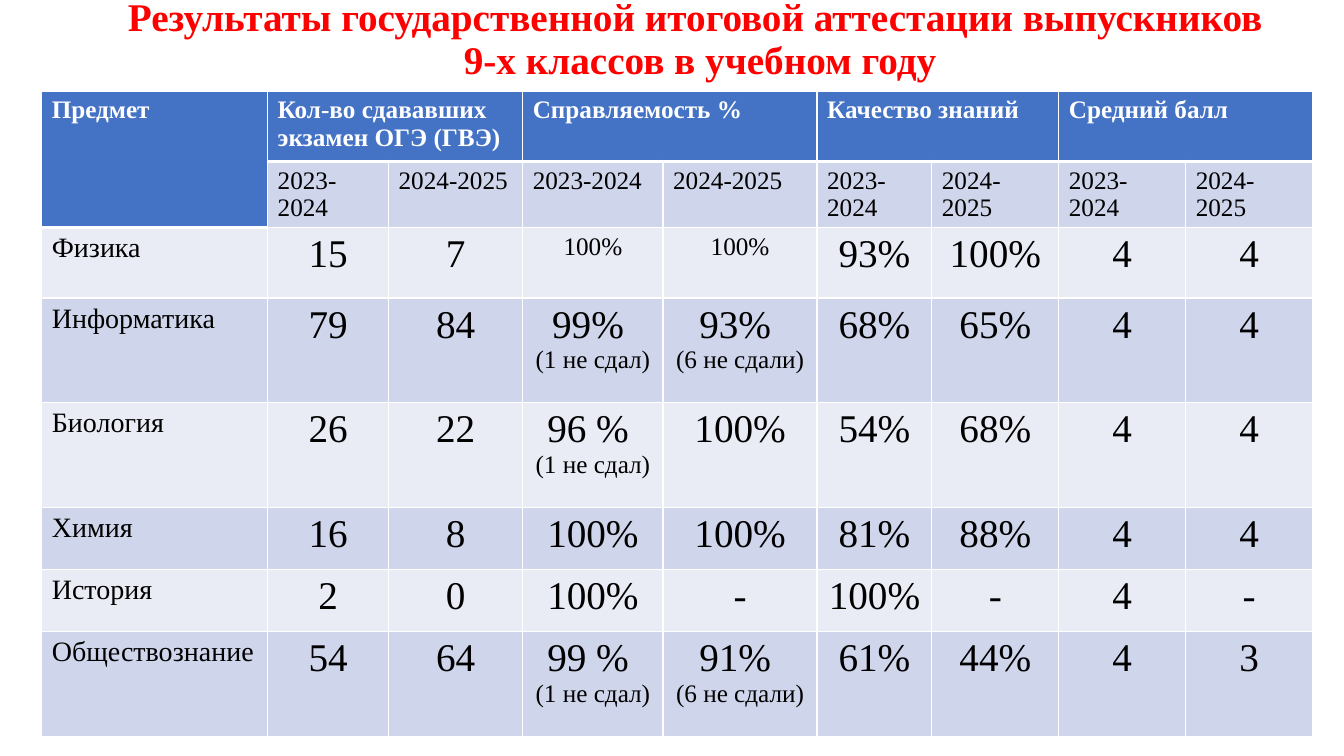
from copy import deepcopy

from lxml.etree import SubElement
from pptx import Presentation
from pptx.dml.color import RGBColor
from pptx.enum.text import MSO_ANCHOR, MSO_AUTO_SIZE, PP_ALIGN
from pptx.oxml.ns import qn
from pptx.util import Pt

RED = RGBColor(0xFF, 0, 0)
BLACK = RGBColor(0, 0, 0)
WHITE = RGBColor(0xFF, 0xFF, 0xFF)
BLUE = RGBColor(0x44, 0x72, 0xC4)
DARK = RGBColor(0xCF, 0xD5, 0xEA)
LIGHT = RGBColor(0xE9, 0xEB, 0xF5)

TITLE = ("Результаты государственной итоговой аттестации выпускников \v"
         "9-х классов в учебном году")
HEADS = ["Кол-во сдававших экзамен ОГЭ (ГВЭ)", "Справляемость %",
         "Качество знаний", "Средний балл"]
YEARS = ["2023-2024", "2024-2025"]
ROWS = [
    ["Физика", "15", "7", "100%", "100%", "93%", "100%", "4", "4"],
    ["Информатика", "79", "84", "99% \n(1 не сдал)", "93% \n(6 не сдали)",
     "68%", "65%", "4", "4"],
    ["Биология", "26", "22", "96 % \n(1 не сдал)", "100%",
     "54%", "68%", "4", "4"],
    ["Химия", "16", "8", "100%", "100%", "81%", "88%", "4", "4"],
    ["История", "2", "0", "100%", "-", "100%", "-", "4", "-"],
    ["Обществознание", "54", "64", "99 % \n(1 не сдал)", "91% \n(6 не сдали)",
     "61%", "44%", "4", "3"],
]
SMALL = {(0, 3), (0, 4)}  # results set in the smaller size
WIDTHS = [161.4, 86.4, 95.8, 100.3, 110, 82, 90.7, 90.7, 90.7]
HEIGHTS = [50.4, 45.4, 50.4, 74.9, 74.9, 43.9, 44.8, 74.9]


def write(frame, text, size=18, note=18, color=BLACK, bold=False,
          align=PP_ALIGN.LEFT, space=None, font="Times New Roman"):
    """Fill a frame; a line in brackets takes the note size."""
    for i, line in enumerate(text.split("\n")):
        para = frame.add_paragraph() if i else frame.paragraphs[0]
        para.text = line
        para.alignment = align
        para.line_spacing = space
        for run in para.runs:
            run.font.name = font
            run.font.size = Pt(note if line.startswith("(") else size)
            run.font.bold = bold
            run.font.color.rgb = color
        # Line breaks take the format of the text around them
        for brk in para._p.findall(qn("a:br")):
            brk.append(deepcopy(para.runs[0].font._rPr))


class Page:
    def __init__(self, deck):
        self.edge = WHITE
        self.slide = deck.slides.add_slide(deck.slide_layouts[5])

    def title(self, text, left, top, width, height):
        shape = self.slide.shapes.title
        shape.left, shape.top = Pt(left), Pt(top)
        shape.width, shape.height = Pt(width), Pt(height)
        frame = shape.text_frame
        frame.word_wrap = True
        frame.auto_size = MSO_AUTO_SIZE.NONE
        frame.vertical_anchor = MSO_ANCHOR.MIDDLE
        write(frame, text, size=28, color=RED, bold=True,
              align=PP_ALIGN.CENTER, space=0.9)

    def table(self, left, top, widths, heights):
        grid = self.slide.shapes.add_table(
            len(heights), len(widths), Pt(left), Pt(top),
            Pt(sum(widths)), Pt(sum(heights))).table
        grid.horz_banding = False
        for col, width in zip(grid.columns, widths):
            col.width = Pt(width)
        for row, height in zip(grid.rows, heights):
            row.height = Pt(height)
        return grid

    def cell(self, cell, text, fill, base=1, **style):
        props = cell._tc.get_or_add_tcPr()
        for side in "LRTB":
            width = base if side == "B" else 1
            line = SubElement(props, qn("a:ln" + side), w=str(Pt(width)))
            paint = SubElement(line, qn("a:solidFill"))
            SubElement(paint, qn("a:srgbClr"), val=str(self.edge))
        cell.fill.solid()
        cell.fill.fore_color.rgb = fill
        write(cell.text_frame, text, **style)


def main():
    deck = Presentation()
    deck.slide_width, deck.slide_height = Pt(960), Pt(540)
    page = Page(deck)
    page.title(TITLE, 67.7, 7.9, 864.7, 41.8)
    grid = page.table(29.8, 65, WIDTHS, HEIGHTS)

    # Heading rows
    head = dict(fill=BLUE, base=3, color=WHITE, bold=True)
    grid.cell(0, 0).merge(grid.cell(1, 0))
    page.cell(grid.cell(0, 0), "Предмет", **head)
    for i, text in enumerate(HEADS):
        col = 1 + 2 * i
        grid.cell(0, col).merge(grid.cell(0, col + 1))
        page.cell(grid.cell(0, col), text, **head)
        for j, year in enumerate(YEARS):
            page.cell(grid.cell(1, col + j), year, DARK)

    # Subject rows
    for r, row in enumerate(ROWS):
        fill = DARK if r % 2 else LIGHT
        page.cell(grid.cell(r + 2, 0), row[0], fill, size=20)
        for c, text in enumerate(row[1:], 1):
            size = 18 if (r, c) in SMALL else 28
            page.cell(grid.cell(r + 2, c), text, fill, size=size,
                      align=PP_ALIGN.CENTER)

    deck.save("out.pptx")


if __name__ == "__main__":
    main()
